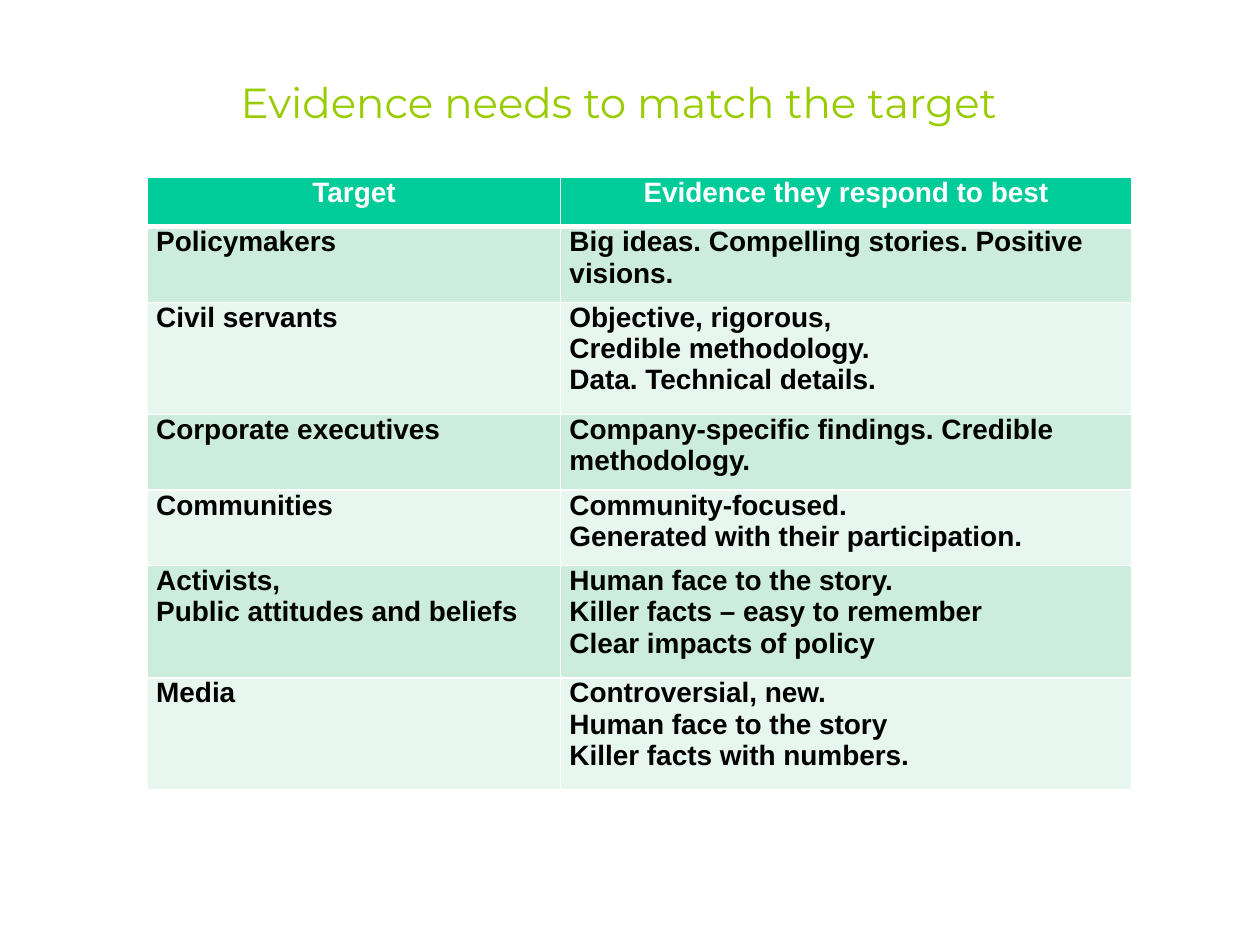
from dataclasses import dataclass

from lxml.etree import SubElement as Sub
from pptx import Presentation
from pptx.dml.color import RGBColor as Rgb
from pptx.enum.text import MSO_ANCHOR as Anchor, PP_ALIGN as Align
from pptx.oxml.ns import qn
from pptx.slide import Slide
from pptx.table import _Cell as Cell
from pptx.util import Inches, Pt


@dataclass(frozen=True)
class Theme:
    lime: str = "99CC00"
    head: str = "00CC99"
    bands: tuple[str, str] = ("CCECDE", "E7F6EF")
    white: str = "FFFFFF"
    black: str = "000000"
    title: int = 24
    body: int = 16
    face: str = "Montserrat"
    font: str = "Arial"


@dataclass(frozen=True)
class Row:
    target: str
    proof: str

    def height(self) -> float:
        return 0.89 if self.proof.count("\n") == 2 else 0.6


THEME = Theme()
HEAD = Row("Target", "Evidence they respond to best")
ROWS = [
    Row("Policymakers", "Big ideas. Compelling stories. Positive visions."),
    Row("Civil servants",
        "Objective, rigorous,\nCredible methodology.\nData. Technical details."),
    Row("Corporate executives", "Company-specific findings. Credible methodology."),
    Row("Communities", "Community-focused.\nGenerated with their participation."),
    Row("Activists,\nPublic attitudes and beliefs",
        "Human face to the story.\nKiller facts – easy to remember\nClear impacts of policy"),
    Row("Media",
        "Controversial, new.\nHuman face to the story\nKiller facts with numbers."),
]
WIDTHS = (3.28, 4.53)
HEAD_HEIGHT = 0.39


def add_edges(cell: Cell, base: int) -> None:
    props = cell._tc.get_or_add_tcPr()
    for side, width in zip("LRTB", (1, 1, 1, base)):
        line = Sub(props, qn(f"a:ln{side}"), w=str(Pt(width)))
        fill = Sub(line, qn("a:solidFill"))
        Sub(fill, qn("a:srgbClr"), val=THEME.white)


def fill_cell(cell: Cell, text: str, fill: str, head: bool) -> None:
    add_edges(cell, 3 if head else 1)
    cell.fill.solid()
    cell.fill.fore_color.rgb = Rgb.from_string(fill)
    cell.margin_left = cell.margin_right = Inches(0.07)
    cell.margin_top = cell.margin_bottom = Inches(0)
    cell.text = text
    for para in cell.text_frame.paragraphs:
        para.alignment = Align.CENTER if head else Align.LEFT
        font = para.font
        font.name, font.size, font.bold = THEME.font, Pt(THEME.body), True
        font.color.rgb = Rgb.from_string(THEME.white if head else THEME.black)


def add_grid(slide: Slide) -> None:
    heights = [HEAD_HEIGHT] + [row.height() for row in ROWS]
    table = slide.shapes.add_table(
        len(heights), len(WIDTHS), Inches(1.17), Inches(1.41),
        Inches(sum(WIDTHS)), Inches(sum(heights))).table
    for col, width in zip(table.columns, WIDTHS):
        col.width = Inches(width)
    for num, (row, height) in enumerate(zip([HEAD] + ROWS, heights)):
        table.rows[num].height = Inches(height)
        head = num == 0
        fill = THEME.head if head else THEME.bands[(num - 1) % 2]
        for col, text in enumerate((row.target, row.proof)):
            fill_cell(table.cell(num, col), text, fill, head)


def add_title(slide: Slide, text: str) -> None:
    box = slide.shapes.add_textbox(Inches(0.31), Inches(0.47), Inches(9.2), Inches(0.67))
    frame = box.text_frame
    frame.word_wrap = True
    frame.vertical_anchor = Anchor.MIDDLE
    para = frame.paragraphs[0]
    para.text = text
    para.alignment = Align.CENTER
    para.font.name, para.font.size = THEME.face, Pt(THEME.title)
    para.font.color.rgb = Rgb.from_string(THEME.lime)


def main() -> None:
    deck = Presentation()
    deck.slide_width, deck.slide_height = Inches(10), Inches(7.5)
    slide = deck.slides.add_slide(deck.slide_layouts[6])
    add_grid(slide)
    add_title(slide, "Evidence needs to match the target")
    deck.save("out.pptx")


if __name__ == "__main__":
    main()
